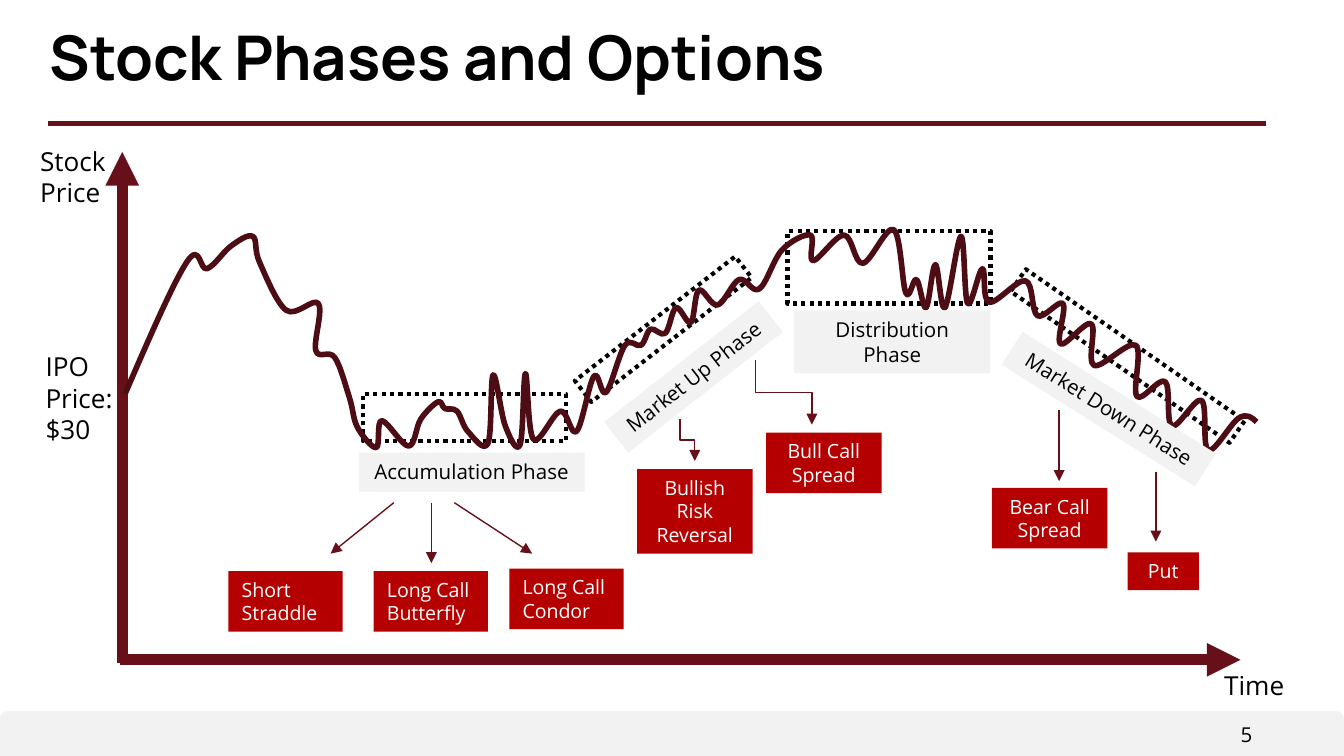
"""Build the slide on stock phases and the options that suit each phase."""
from dataclasses import dataclass

import lxml.etree
import pptx
import pptx.dml.color
import pptx.enum.dml
import pptx.enum.shapes
import pptx.enum.text
import pptx.oxml.ns
import pptx.util

Pt = pptx.util.Pt
qn = pptx.oxml.ns.qn
Kind = pptx.enum.shapes.MSO_SHAPE
Link = pptx.enum.shapes.MSO_CONNECTOR
Align = pptx.enum.text.PP_ALIGN
Point = tuple[float, float]

COLORS = {
    "ink": "000000",
    "pale": "F2F2F2",
    "white": "FFFFFF",
    "red": "B40000",
    "rule": "67121B",
    "axis": "671019",
    "curve": "4C0D14",
}


@dataclass
class Box:
    """A rectangle, with its text if it has any."""
    left: float
    top: float
    width: float
    height: float
    text: str = ""
    turn: float = 0
    align: Align = Align.CENTER


@dataclass
class Style:
    """The look of a text."""
    size: float
    color: str = "ink"
    font: str = "Open Sans"
    bold: bool = False


@dataclass
class Arrow:
    """A line between two points."""
    start: Point
    end: Point
    color: str = "axis"
    weight: float = 0.75
    head: bool = True
    bent: bool = False


TITLE = Box(21.6, 11.5, 670.3, 49, "Stock Phases and Options", align=Align.LEFT)
FOOTER = Box(0, 381, 720, 24)
NUMBER = Box(584.6, 383.8, 91.4, 18, "5", align=Align.RIGHT)
NAMES = [
    Box(648.7, 355, 48.2, 24.5, "Time", align=Align.LEFT),
    Box(14.4, 74.2, 51.1, 41, "Stock Price", align=Align.LEFT),
    Box(17.3, 184.3, 51.1, 58.3, "IPO Price: $30", align=Align.LEFT),
]
FRAMES = [
    Box(421.9, 123.8, 108.7, 38.9),
    Box(194.4, 211, 108.7, 25.2),
    Box(301, 169.2, 108.7, 14.4, turn=322.2),
    Box(532.8, 183.6, 142.6, 14.4, turn=34.7),
]
PHASES = [
    Box(192.2, 242.6, 121, 20.9, "Accumulation Phase"),
    Box(319, 191.5, 105.1, 20.9, "Market Up Phase", 322),
    Box(425.5, 166.3, 105.1, 33.8, "Distribution Phase"),
    Box(532.8, 208.8, 122.4, 20.9, "Market Down Phase", 32.2),
]
TRADES = [
    Box(122.4, 306, 61.2, 32.4, "Short Straddle", align=Align.LEFT),
    Box(200.2, 306, 61.2, 32.4, "Long Call Butterfly", align=Align.LEFT),
    Box(272.9, 304.6, 61.2, 32.4, "Long Call Condor", align=Align.LEFT),
    Box(341.3, 251.3, 61.9, 45.4, "Bullish Risk Reversal"),
    Box(410.4, 231.8, 61.9, 32.4, "Bull Call Spread"),
    Box(531.4, 261.4, 61.9, 32.4, "Bear Call Spread"),
    Box(604.1, 295.9, 38.2, 20.2, "Put"),
]
RULE = Arrow((25.9, 66.2), (678.2, 66.2), "rule", 2.5, head=False)
AXES = [
    Arrow((64.1, 353.5), (664.6, 353.5), weight=6),
    Arrow((65.5, 355), (65.5, 81.4), weight=6),
]
ARROWS = [
    Arrow((211, 269.3), (177.1, 296.6)),
    Arrow((231.1, 269.3), (231.1, 301.7)),
    Arrow((243.4, 269.3), (285.1, 296.6)),
    Arrow((567.4, 219.6), (567.4, 257.8)),
    Arrow((619.2, 252.7), (619.2, 290.2)),
    Arrow((364.3, 224.6), (372.2, 247), bent=True),
    Arrow((404.6, 193), (434.9, 227.5), bent=True),
]
PRICES: list[Point] = [
    (67, 211), (100.1, 140.4), (110.9, 144), (123.8, 131.8), (135.4, 126.7),
    (139, 140.4), (153.4, 166.3), (170.6, 162.7), (169.2, 187.9), (179.3, 191.5),
    (187.2, 213.1), (191.5, 229), (201.6, 239.8), (204.5, 225.4), (218.9, 239),
    (225.4, 224.6), (234.7, 215.3), (238.3, 218.9), (244.8, 220.3), (250.6, 231.1),
    (261.4, 237.6), (264.2, 200.9), (270.7, 228.2), (278.6, 238.3), (281.5, 200.2),
    (285.8, 235.4), (300.2, 220.3), (308.9, 231.1), (318.2, 201.6), (324.7, 210.2),
    (334.8, 185), (343.4, 185), (348.5, 176.4), (356.4, 178.6), (362.2, 164.9),
    (370.1, 172.8), (374.4, 155.5), (384.5, 163.4), (396, 149.8), (406.8, 154.8),
    (419, 133.9), (434.2, 126), (435.6, 139.7), (452.2, 126), (462.2, 141.1),
    (478.8, 123.1), (485.3, 157), (491, 149.8), (496.1, 164.9), (501.1, 141.8),
    (506.2, 164.9), (514.8, 126.7), (518.4, 162.7), (526.3, 144), (529.9, 162),
    (549.4, 150.5), (555.8, 169.2), (569.5, 162.7), (568.1, 184.3), (584.6, 173.5),
    (586.1, 195.8), (608.4, 185), (609.1, 212.4), (624.2, 204.5), (627.8, 228.2),
    (643.7, 214.6), (647.3, 241.2), (663.8, 223.9), (673.2, 226.1),
]


def tint(name: str) -> pptx.dml.color.RGBColor:
    return pptx.dml.color.RGBColor.from_string(COLORS[name])


def stroke(line, color: str, weight: float) -> None:
    line.color.rgb = tint(color)
    line.width = Pt(weight)


def write(shape, box: Box, style: Style, inset: Point = (7.2, 3.6)) -> None:
    frame = shape.text_frame
    frame.word_wrap = True
    frame.vertical_anchor = pptx.enum.text.MSO_ANCHOR.TOP
    frame.margin_left = frame.margin_right = Pt(inset[0])
    frame.margin_top = frame.margin_bottom = Pt(inset[1])
    para = frame.paragraphs[0]
    para.alignment = box.align
    run = para.add_run()
    run.text = box.text
    run.font.name, run.font.size = style.font, Pt(style.size)
    run.font.bold = style.bold
    run.font.color.rgb = tint(style.color)


def place(box: Box) -> list[pptx.util.Length]:
    return [Pt(side) for side in (box.left, box.top, box.width, box.height)]


def add_text(slide, box: Box, style: Style, inset: Point = (7.2, 3.6)):
    shape = slide.shapes.add_textbox(*place(box))
    write(shape, box, style, inset)
    return shape


def add_box(slide, box: Box, fill: str = "", kind: Kind = Kind.RECTANGLE):
    shape = slide.shapes.add_shape(kind, *place(box))
    shape.shadow.inherit = False
    shape.rotation = box.turn
    if fill:
        shape.fill.solid()
        shape.fill.fore_color.rgb = tint(fill)
        shape.line.fill.background()
    else:
        shape.fill.background()
        stroke(shape.line, "ink", 2.25)
        shape.line.dash_style = pptx.enum.dml.MSO_LINE.ROUND_DOT
    return shape


def add_arrow(slide, arrow: Arrow) -> None:
    (x1, y1), (x2, y2) = arrow.start, arrow.end
    kind = Link.STRAIGHT
    if arrow.bent:
        kind = Link.ELBOW
        mid_x, mid_y, wide, tall = (x1 + x2) / 2, (y1 + y2) / 2, y2 - y1, x2 - x1
        x1, x2 = mid_x + wide / 2, mid_x - wide / 2
        y1, y2 = mid_y - tall / 2, mid_y + tall / 2
    link = slide.shapes.add_connector(kind, Pt(x1), Pt(y1), Pt(x2), Pt(y2))
    stroke(link.line, arrow.color, arrow.weight)
    props = link._element.spPr
    if arrow.bent:
        props.find(qn("a:xfrm")).set("rot", "16200000")
    if arrow.head:
        lxml.etree.SubElement(props.find(qn("a:ln")), qn("a:tailEnd"), type="triangle")
    lxml.etree.SubElement(props, qn("a:effectLst"))


def smooth(knots: list[Point]) -> list[Point]:
    """Give two handles and an end for each span, sloped by its neighbours."""
    slopes = [((c[0] - a[0]) / 6, (c[1] - a[1]) / 6) for a, c in zip(knots, knots[2:])]
    outs = [(x + dx, y + dy) for (x, y), (dx, dy) in zip(knots[1:], slopes)]
    ins = [(x - dx, y - dy) for (x, y), (dx, dy) in zip(knots[1:], slopes)]
    first = tuple((a + b) / 2 for a, b in zip(knots[0], ins[0]))
    last = tuple((a + b) / 2 for a, b in zip(knots[-1], outs[-1]))
    spans = zip([first, *outs], [*ins, last], knots[1:])
    return [point for span in spans for point in span]


def add_curve(slide, knots: list[Point]) -> None:
    start, *rest = [(Pt(x), Pt(y)) for x, y in [knots[0], *smooth(knots)]]
    pen = slide.shapes.build_freeform(*start)
    pen.add_line_segments(rest, close=False)
    shape = pen.convert_to_shape()
    shape.shadow.inherit = False
    shape.fill.background()
    stroke(shape.line, "curve", 3)
    track = next(shape._element.iter(qn("a:path")))
    steps = track.findall(qn("a:lnTo"))
    for i in range(0, len(steps), 3):
        bend = lxml.etree.SubElement(track, qn("a:cubicBezTo"))
        for step in steps[i:i + 3]:
            bend.append(step[0])
            track.remove(step)


def main() -> None:
    deck = pptx.Presentation()
    deck.slide_width, deck.slide_height = Pt(720), Pt(405)
    slide = deck.slides.add_slide(deck.slide_layouts[6])
    footer = add_box(slide, FOOTER, "pale", Kind.ROUND_2_SAME_RECTANGLE)
    footer.adjustments[0], footer.adjustments[1] = 0.17, 0
    add_text(slide, NUMBER, Style(11), (5.04, 2.88))
    add_arrow(slide, RULE)
    title = add_text(slide, TITLE, Style(33, font="Manrope", bold=True), (5.04, 2.88))
    title.text_frame.paragraphs[0].line_spacing = 0.9
    for axis in AXES:
        add_arrow(slide, axis)
    for name in NAMES:
        add_text(slide, name, Style(14))
    for frame in FRAMES:
        add_box(slide, frame)
    add_curve(slide, PRICES)
    for phase in PHASES:
        write(add_box(slide, phase, "pale"), phase, Style(11))
    for arrow in ARROWS:
        add_arrow(slide, arrow)
    for trade in TRADES:
        write(add_box(slide, trade, "red"), trade, Style(10.5, "white"))
    deck.save("out.pptx")


if __name__ == "__main__":
    main()
